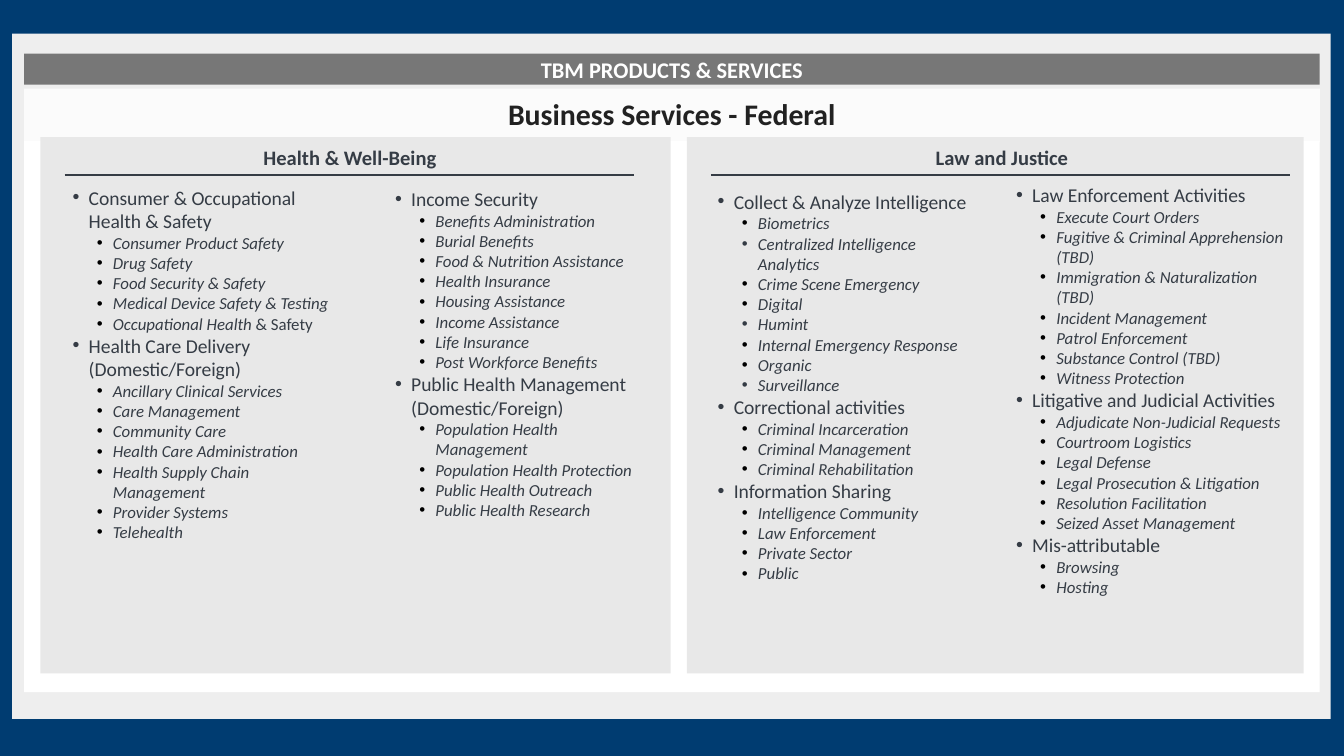
from dataclasses import dataclass

from lxml import etree
from pptx import Presentation
from pptx import util as u
from pptx.dml.color import RGBColor
from pptx.enum import shapes, text
from pptx.oxml import ns


@dataclass(frozen=True)
class Theme:
    font: str = "Calibri"
    back: str = "003C71"
    frame: str = "EEEEEE"
    strip: str = "FBFBFB"
    page: str = "FFFFFF"
    bar: str = "777777"
    panel: str = "E8E8E8"
    title: str = "212121"
    ink: str = "353C45"
    dot: str = "000000"
    huge: float = 16
    large: float = 12
    head: float = 11
    body: float = 10.5
    small: float = 9


@dataclass(frozen=True)
class Box:
    col: float
    row: float
    wide: float
    high: float

    def spots(self) -> list[int]:
        return [span(n) for n in (self.col, self.row, self.wide, self.high)]


@dataclass(frozen=True)
class Item:
    name: str
    plain: str = ""
    dot: str = Theme.dot


@dataclass(frozen=True)
class Group:
    name: str
    items: list[Item]


@dataclass(frozen=True)
class Column:
    box: Box
    groups: list[Group]


@dataclass(frozen=True)
class Panel:
    name: str
    box: Box
    rule: float
    columns: list[Column]


THEME = Theme()
WIDE = u.Inches(10)
HIGH = WIDE * 9 // 16
CELL = WIDE / 100


def span(cells: float) -> int:
    return round(cells * CELL)


def group(name: str, *items: str | Item) -> Group:
    return Group(name, [Item(i) if isinstance(i, str) else i for i in items])


def dim(name: str) -> Item:
    return Item(name, dot=THEME.ink)


PANELS = [
    Panel("Health & Well-Being", Box(3, 10.2, 46.9, 39.9), 42.4, [
        Column(Box(4.9, 13.4, 20.9, 27), [
            group("Consumer & Occupational Health & Safety", "Consumer Product Safety",
                  "Drug Safety", "Food Security & Safety", "Medical Device Safety & Testing",
                  Item("Occupational Health ", "& Safety")),
            group("Health Care Delivery (Domestic/Foreign)", "Ancillary Clinical Services",
                  "Care Management", "Community Care", "Health Care Administration",
                  "Health Supply Chain Management", "Provider Systems", "Telehealth"),
        ]),
        Column(Box(28.9, 13.5, 20, 27), [
            group("Income Security", "Benefits Administration", "Burial Benefits",
                  "Food & Nutrition Assistance", "Health Insurance", "Housing Assistance",
                  "Income Assistance", "Life Insurance", "Post Workforce Benefits"),
            group("Public Health Management (Domestic/Foreign)",
                  "Population Health Management", "Population Health Protection",
                  "Public Health Outreach", "Public Health Research"),
        ]),
    ]),
    Panel("Law and Justice", Box(51.1, 10.2, 45.9, 39.9), 43.1, [
        Column(Box(75.1, 13.2, 20.9, 27), [
            group("Law Enforcement Activities", "Execute Court Orders",
                  "Fugitive & Criminal Apprehension (TBD)",
                  "Immigration & Naturalization (TBD)", "Incident Management",
                  "Patrol Enforcement", "Substance Control (TBD)", "Witness Protection"),
            group("Litigative and Judicial Activities", "Adjudicate Non-Judicial Requests",
                  "Courtroom Logistics", "Legal Defense", "Legal Prosecution & Litigation",
                  "Resolution Facilitation", "Seized Asset Management"),
            group("Mis-attributable", "Browsing", "Hosting"),
        ]),
        Column(Box(52.9, 13.7, 20, 27), [
            group("Collect & Analyze Intelligence", "Biometrics",
                  dim("Centralized Intelligence Analytics"), "Crime Scene Emergency",
                  "Digital", dim("Humint"), "Internal Emergency Response", "Organic",
                  dim("Surveillance")),
            group("Correctional activities", "Criminal Incarceration",
                  "Criminal Management", "Criminal Rehabilitation"),
            group("Information Sharing", "Intelligence Community", "Law Enforcement",
                  "Private Sector", "Public"),
        ]),
    ]),
]


def paint(shape, hue: str) -> None:
    shape.fill.solid()
    shape.fill.fore_color.rgb = RGBColor.from_string(hue)


def block(slide, box: Box, hue: str):
    shape = slide.shapes.add_shape(shapes.MSO_SHAPE.RECTANGLE, *box.spots())
    shape.shadow.inherit = False
    paint(shape, hue)
    shape.line.fill.background()
    return shape


def setup(shape, anchor, side: float, top: float):
    frame = shape.text_frame
    frame.word_wrap = True
    frame.auto_size = text.MSO_AUTO_SIZE.NONE
    frame.vertical_anchor = anchor
    frame.margin_left = frame.margin_right = span(side)
    frame.margin_top = frame.margin_bottom = span(top)
    return frame


def write(para, words: str, size: float, hue: str, bold=False, slant=False) -> None:
    run = para.add_run()
    run.text = words
    font = run.font
    font.name, font.size, font.bold, font.italic = THEME.font, u.Pt(size), bold, slant
    font.color.rgb = RGBColor.from_string(hue)


def label(shape, words: str, size: float, hue: str, anchor, side=1.0, top=0.5) -> None:
    para = setup(shape, anchor, side, top).paragraphs[0]
    para.alignment = text.PP_ALIGN.CENTER
    write(para, words, size, hue, bold=True)


def bullet(para, level: int, left: float, hue: str) -> None:
    para.level = level
    props = para._p.get_or_add_pPr()
    props.set("marL", str(span(left)))
    props.set("indent", str(span(-1.2)))
    color = etree.SubElement(props, ns.qn("a:buClr"))
    etree.SubElement(color, ns.qn("a:srgbClr"), val=hue)
    etree.SubElement(props, ns.qn("a:buFont"), typeface="Arial")
    etree.SubElement(props, ns.qn("a:buChar"), char="•")


def fill(slide, column: Column) -> None:
    shape = slide.shapes.add_textbox(*column.box.spots())
    frame = setup(shape, text.MSO_ANCHOR.TOP, 0.4, 0.4)
    para = frame.paragraphs[0]
    for part in column.groups:
        para = para or frame.add_paragraph()
        bullet(para, 1, 1.3, THEME.ink)
        write(para, part.name, THEME.body, THEME.ink)
        for item in part.items:
            para = frame.add_paragraph()
            bullet(para, 2, 3.1, item.dot)
            write(para, item.name, THEME.small, THEME.ink, slant=True)
            if item.plain:
                write(para, item.plain, THEME.small, THEME.ink)
        para = None


def draw(slide, panel: Panel) -> None:
    box = panel.box
    block(slide, box, THEME.panel)
    wide = panel.rule - 0.1 if box.col < 50 else panel.rule
    head = slide.shapes.add_textbox(*Box(box.col + 1.9, 10.4, wide, 2.2).spots())
    label(head, panel.name, THEME.head, THEME.ink, text.MSO_ANCHOR.BOTTOM, 0, 0)
    left = box.col + 1.8
    rule = slide.shapes.add_connector(
        shapes.MSO_CONNECTOR.STRAIGHT, span(left), span(13), span(left + panel.rule), span(13))
    rule.line.color.rgb = RGBColor.from_string(THEME.ink)
    rule.line.width = u.Pt(1)
    etree.SubElement(rule.element.spPr, ns.qn("a:effectLst"))
    for column in panel.columns:
        fill(slide, column)


def main() -> None:
    deck = Presentation()
    deck.slide_width, deck.slide_height = WIDE, HIGH
    slide = deck.slides.add_slide(deck.slide_layouts[5])
    paint(slide.background, THEME.back)
    frame = block(slide, Box(0.9, 2.5, 98.1, 51), THEME.frame)
    title = slide.shapes.title
    title.left, title.top, title.width, title.height = Box(1.8, 6.6, 96.4, 4).spots()
    paint(title, THEME.strip)
    label(title, "Business Services - Federal", THEME.huge, THEME.title, text.MSO_ANCHOR.TOP)
    frame.element.addnext(title.element)
    block(slide, Box(1.8, 10.5, 96.4, 41), THEME.page)
    bar = block(slide, Box(1.8, 4, 96.4, 2.3), THEME.bar)
    label(bar, "TBM PRODUCTS & SERVICES", THEME.large, THEME.page, text.MSO_ANCHOR.MIDDLE)
    for panel in PANELS:
        draw(slide, panel)
    deck.save("out.pptx")


if __name__ == "__main__":
    main()
